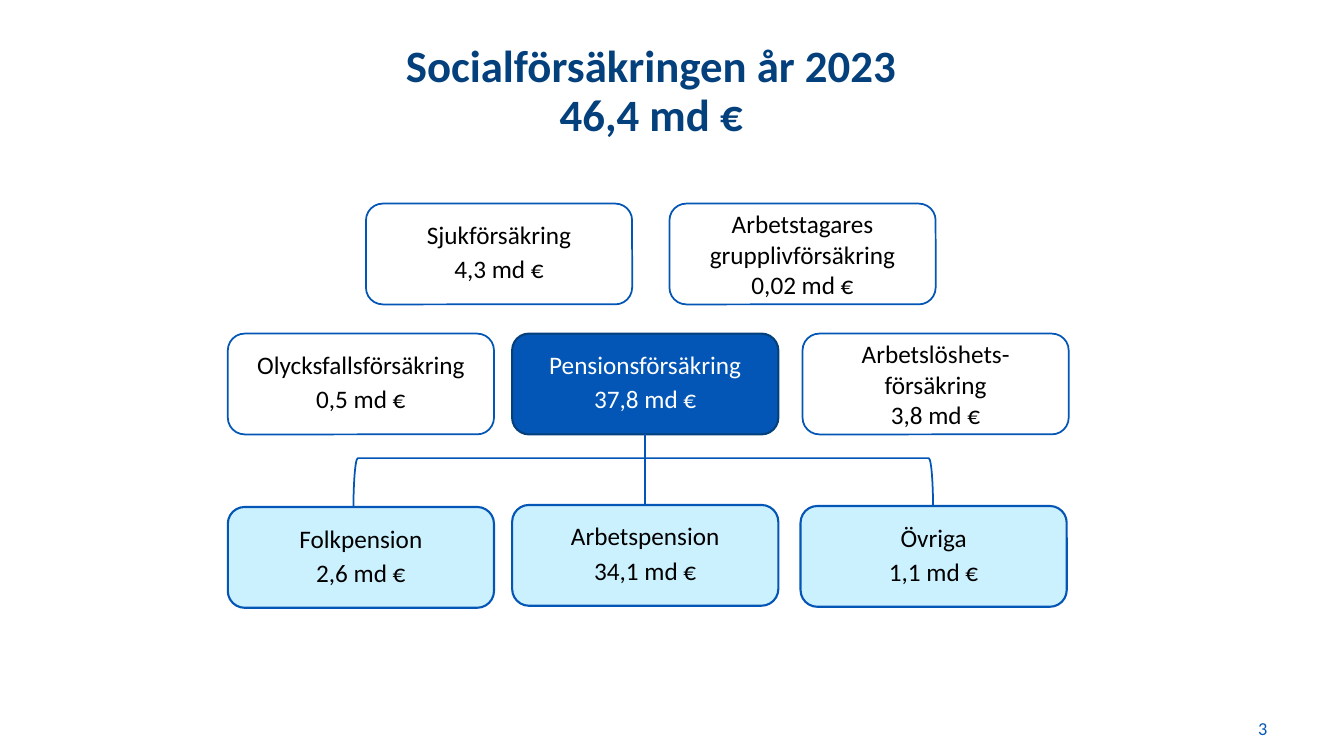
from dataclasses import dataclass
from typing import Optional

from pptx import Presentation
from pptx.dml.color import RGBColor
from pptx.enum.shapes import MSO_CONNECTOR, MSO_SHAPE
from pptx.enum.text import MSO_ANCHOR, PP_ALIGN
from pptx.oxml.ns import qn
from pptx.util import Inches, Pt

ROUNDED = MSO_SHAPE.ROUNDED_RECTANGLE
BRACKET = MSO_SHAPE.RIGHT_BRACKET
STRAIGHT = MSO_CONNECTOR.STRAIGHT
TOP, MIDDLE = MSO_ANCHOR.TOP, MSO_ANCHOR.MIDDLE
LEFT, CENTER = PP_ALIGN.LEFT, PP_ALIGN.CENTER

NAVY = RGBColor(0x03, 0x40, 0x7C)
BLUE = RGBColor(0x03, 0x56, 0xB5)
PALE = RGBColor(0xCC, 0xF1, 0xFE)
BLACK = RGBColor(0, 0, 0)
WHITE = RGBColor(0xFF, 0xFF, 0xFF)

FONT = "Calibri"
BOX_WIDTH, BOX_HEIGHT = 2.64, 1.0
BOTTOM_SIDE, TOP_SIDE = 2, 0


@dataclass
class Style:
    fill: Optional[RGBColor]
    line: RGBColor
    line_width: float
    text: RGBColor


@dataclass
class Box:
    left: float
    top: float
    lines: list[str]
    style: Style
    line_spacing: float = 0.85
    gap: float = 6


INSURANCE = Style(None, BLUE, 1.25, BLACK)
HIGHLIGHT = Style(BLUE, NAVY, 1.5, WHITE)
PENSION = Style(PALE, BLUE, 1.5, BLACK)

PENSION_INSURANCE = Box(5.08, 3.31, ["Pensionsförsäkring", "37,8 md €"], HIGHLIGHT)
WORK_PENSION = Box(5.08, 5.01, ["Arbetspension", "34,1 md €"], PENSION)
OTHER_BOXES = [
    Box(3.63, 2.02, ["Sjukförsäkring", "4,3 md €"], INSURANCE),
    Box(6.64, 2.02, ["Arbetstagares", "grupplivförsäkring", "0,02 md €"], INSURANCE, 1.0, 0),
    Box(2.26, 3.31, ["Olycksfallsförsäkring", "0,5 md €"], INSURANCE),
    Box(7.96, 3.31, ["Arbetslöshets-försäkring", "3,8 md €"], INSURANCE, 1.0, 0),
    Box(2.26, 5.03, ["Folkpension", "2,6 md €"], PENSION),
    Box(7.94, 5.02, ["Övriga", "1,1 md €"], PENSION),
]


def style_paragraph(paragraph, size: float, color: RGBColor, alignment, spacing: float) -> None:
    paragraph.alignment = alignment
    paragraph.line_spacing = spacing
    paragraph.font.name = FONT
    paragraph.font.size = Pt(size)
    paragraph.font.color.rgb = color


def add_box(slide, box: Box):
    shape = slide.shapes.add_shape(
        ROUNDED, Inches(box.left), Inches(box.top), Inches(BOX_WIDTH), Inches(BOX_HEIGHT))
    shape.shadow.inherit = False
    if box.style.fill is None:
        shape.fill.background()
    else:
        shape.fill.solid()
        shape.fill.fore_color.rgb = box.style.fill
    shape.line.color.rgb = box.style.line
    shape.line.width = Pt(box.style.line_width)
    frame = shape.text_frame
    frame.word_wrap = True
    frame.vertical_anchor = MIDDLE
    frame.text = "\n".join(box.lines)
    for paragraph in frame.paragraphs:
        style_paragraph(paragraph, 18, box.style.text, CENTER, box.line_spacing)
    for paragraph in frame.paragraphs[1:]:
        paragraph.space_before = Pt(box.gap)
    return shape


def add_label(slide, left: float, top: float, width: float, height: float, text: str,
              size: float, color: RGBColor, alignment, anchor, spacing: float = 1.0):
    """Add a one-paragraph text box and return its paragraph."""
    label = slide.shapes.add_textbox(Inches(left), Inches(top), Inches(width), Inches(height))
    frame = label.text_frame
    frame.word_wrap = True
    frame.vertical_anchor = anchor
    frame.text = text
    paragraph = frame.paragraphs[0]
    style_paragraph(paragraph, size, color, alignment, spacing)
    return paragraph


def add_bracket(slide) -> None:
    """Add the bracket that spans the three kinds of pension."""
    bracket = slide.shapes.add_shape(
        BRACKET, Inches(6.12), Inches(1.93), Inches(0.52), Inches(5.75))
    bracket.rotation = 270
    bracket.shadow.inherit = False
    bracket.fill.background()
    bracket.line.color.rgb = BLUE
    bracket.line.width = Pt(1.25)


def join(slide, upper, lower) -> None:
    connector = slide.shapes.add_connector(STRAIGHT, 0, 0, 0, 0)
    connector.begin_connect(upper, BOTTOM_SIDE)
    connector.end_connect(lower, TOP_SIDE)
    connector.line.color.rgb = BLUE
    connector.line.width = Pt(1.25)
    properties = connector.element.spPr
    properties.append(properties.makeelement(qn("a:effectLst"), {}))


def main() -> None:
    presentation = Presentation()
    presentation.slide_width = Inches(13.33)
    presentation.slide_height = Inches(7.5)
    slide = presentation.slides.add_slide(presentation.slide_layouts[6])

    title = add_label(slide, 0, 0.39, 12.92, 1.46, "Socialförsäkringen år 2023\v46,4 md €",
                      32, NAVY, CENTER, TOP, 0.9)
    title.font.bold = True
    add_bracket(slide)
    for box in OTHER_BOXES:
        add_box(slide, box)
    join(slide, add_box(slide, PENSION_INSURANCE), add_box(slide, WORK_PENSION))
    add_label(slide, 12.38, 7.05, 0.44, 0.35, "3", 13, BLUE, LEFT, MIDDLE)

    presentation.save("out.pptx")


if __name__ == "__main__":
    main()
